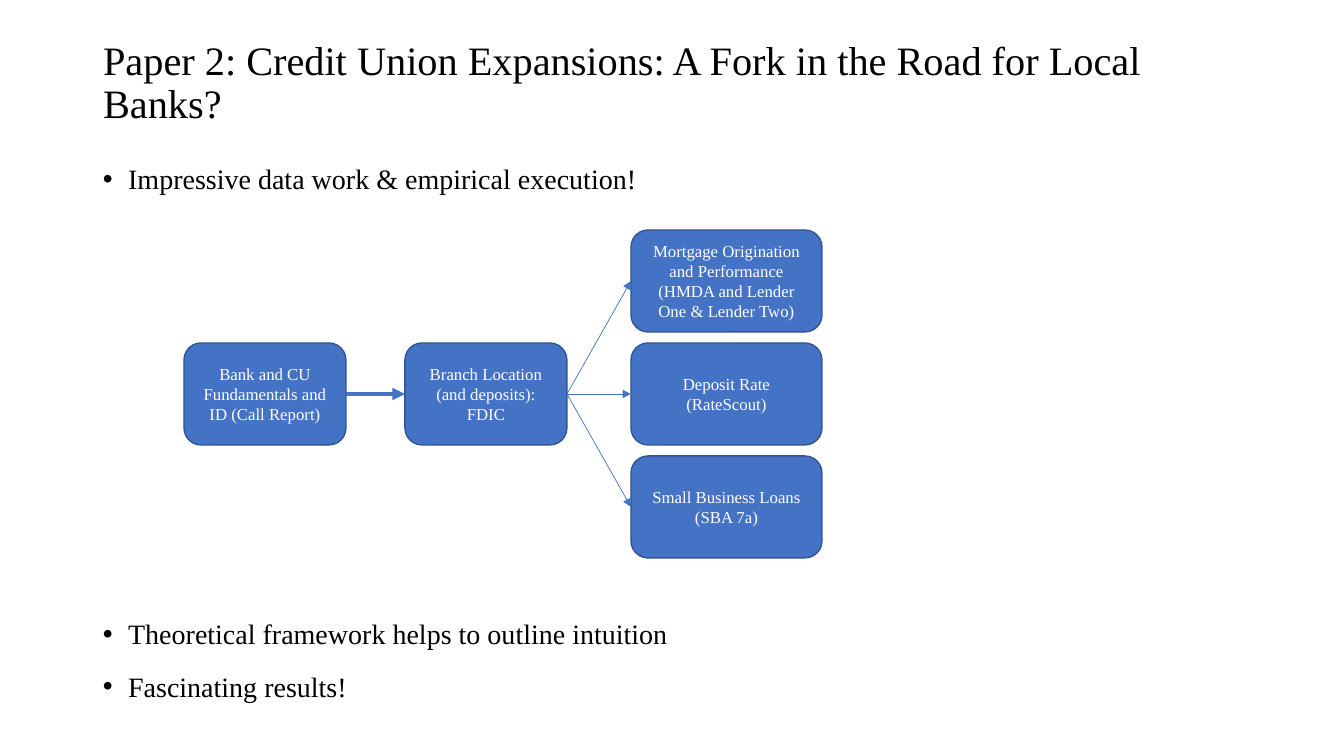
from lxml import etree
from pptx import Presentation
from pptx.dml.color import RGBColor
from pptx.enum.shapes import MSO_CONNECTOR, MSO_SHAPE
from pptx.enum.text import MSO_ANCHOR, MSO_AUTO_SIZE, PP_ALIGN
from pptx.oxml.ns import qn
from pptx.util import Emu, Pt

EMU_PER_PX = 914400 / 100.8
FONT = "Times New Roman"
BLACK = RGBColor(0x00, 0x00, 0x00)
WHITE = RGBColor(0xFF, 0xFF, 0xFF)
BLUE = RGBColor(0x44, 0x72, 0xC4)
DARK_BLUE = RGBColor(0x32, 0x54, 0x91)

ROUNDED = MSO_SHAPE.ROUNDED_RECTANGLE
STRAIGHT = MSO_CONNECTOR.STRAIGHT
MIDDLE = MSO_ANCHOR.MIDDLE
LEFT = PP_ALIGN.LEFT
CENTER = PP_ALIGN.CENTER
NO_AUTOFIT = MSO_AUTO_SIZE.NONE
LEFT_SITE, RIGHT_SITE = 1, 3

CONTENT_LEFT, CONTENT_WIDTH = 93, 1159
BOX_HEIGHT, ROW_PITCH = 102, 113
MIDDLE_ROW = 343
SOURCE_WIDTH, OUTCOME_WIDTH = 162, 191
OUTCOME_LEFT = 631

TITLE = "Paper 2: Credit Union Expansions: A Fork in the Road for Local Banks?"
BULLETS = [
    ("Impressive data work & empirical execution!", 6),
    ("Theoretical framework helps to outline intuition", 294),
    ("Fascinating results!", 6),
]
OUTCOMES = [
    "Mortgage Origination and Performance (HMDA and Lender One & Lender Two)",
    "Deposit Rate\n(RateScout)",
    "Small Business Loans (SBA 7a)",
]


def px(length):
    return Emu(round(length * EMU_PER_PX))


def format_paragraph(paragraph, size, color, alignment):
    paragraph.alignment = alignment
    for run in paragraph.runs:
        run.font.name = FONT
        run.font.size = Pt(size)
        run.font.color.rgb = color


def set_title(slide):
    title = slide.shapes.title
    title.left, title.top = px(CONTENT_LEFT), px(40)
    title.width, title.height = px(CONTENT_WIDTH), px(88)
    text_frame = title.text_frame
    text_frame.text = TITLE
    text_frame.auto_size = NO_AUTOFIT
    text_frame.vertical_anchor = MIDDLE
    paragraph = text_frame.paragraphs[0]
    paragraph.line_spacing = 0.9
    format_paragraph(paragraph, 28.8, BLACK, LEFT)


def add_bullet(paragraph):
    properties = paragraph._p.get_or_add_pPr()
    properties.set("marL", "228600")
    properties.set("indent", "-228600")
    etree.SubElement(properties, qn("a:buFont"), typeface="Arial")
    etree.SubElement(properties, qn("a:buChar"), char="•")


def add_bullets(slide):
    text_box = slide.shapes.add_textbox(
        px(CONTENT_LEFT), px(155), px(CONTENT_WIDTH), px(591))
    text_frame = text_box.text_frame
    text_frame.word_wrap = True
    text_frame.text = "\n".join(text for text, _ in BULLETS)
    for paragraph, (_, space_before) in zip(text_frame.paragraphs, BULLETS):
        paragraph.line_spacing = 1.05
        paragraph.space_before = Pt(space_before)
        paragraph.space_after = Pt(6)
        format_paragraph(paragraph, 20, BLACK, LEFT)
        add_bullet(paragraph)


def add_box(slide, text, left, top, width):
    shape = slide.shapes.add_shape(
        ROUNDED, px(left), px(top), px(width), px(BOX_HEIGHT))
    shape.shadow.inherit = False
    shape.fill.solid()
    shape.fill.fore_color.rgb = BLUE
    shape.line.color.rgb = DARK_BLUE
    shape.line.width = Pt(1)
    text_frame = shape.text_frame
    text_frame.word_wrap = True
    text_frame.vertical_anchor = MIDDLE
    text_frame.text = text
    for paragraph in text_frame.paragraphs:
        format_paragraph(paragraph, 12, WHITE, CENTER)
    return shape


def add_arrow(slide, start, end, width):
    connector = slide.shapes.add_connector(STRAIGHT, 0, 0, 0, 0)
    connector.begin_connect(start, RIGHT_SITE)
    connector.end_connect(end, LEFT_SITE)
    connector.line.color.rgb = BLUE
    connector.line.width = Pt(width)
    etree.SubElement(connector.line._get_or_add_ln(), qn("a:tailEnd"), type="triangle")
    etree.SubElement(connector._element.spPr, qn("a:effectLst"))


def add_data_diagram(slide):
    fundamentals = add_box(
        slide, "Bank and CU Fundamentals and ID (Call Report)",
        184, MIDDLE_ROW, SOURCE_WIDTH)
    branches = add_box(
        slide, "Branch Location (and deposits): FDIC",
        405, MIDDLE_ROW, SOURCE_WIDTH)
    add_arrow(slide, fundamentals, branches, 3)
    for row, text in enumerate(OUTCOMES, start=-1):
        outcome = add_box(
            slide, text, OUTCOME_LEFT, MIDDLE_ROW + row * ROW_PITCH, OUTCOME_WIDTH)
        add_arrow(slide, branches, outcome, 0.5)


def main():
    presentation = Presentation()
    presentation.slide_width = px(1344)
    presentation.slide_height = px(756)
    slide = presentation.slides.add_slide(presentation.slide_layouts[5])
    set_title(slide)
    add_bullets(slide)
    add_data_diagram(slide)
    presentation.save("out.pptx")


if __name__ == "__main__":
    main()
